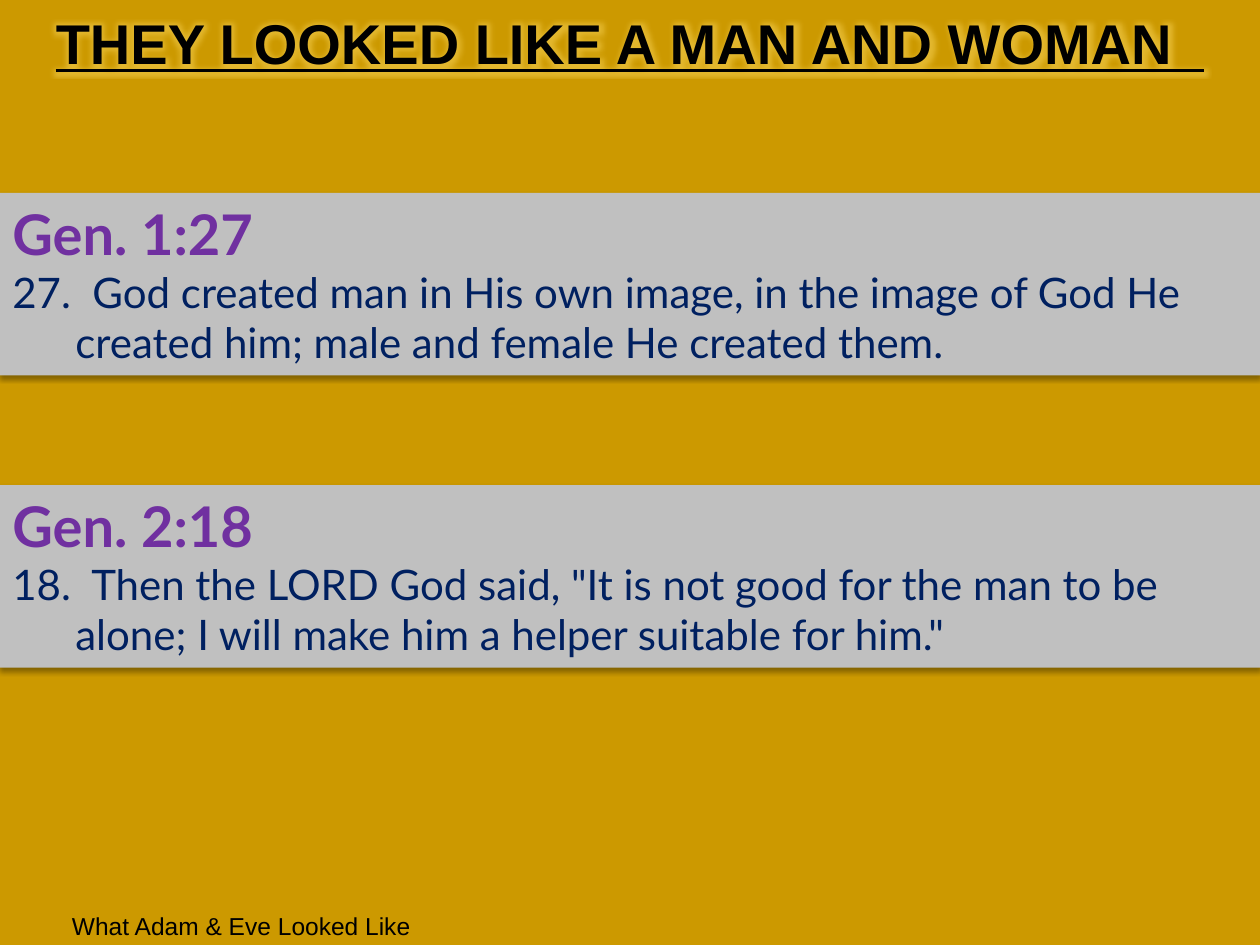
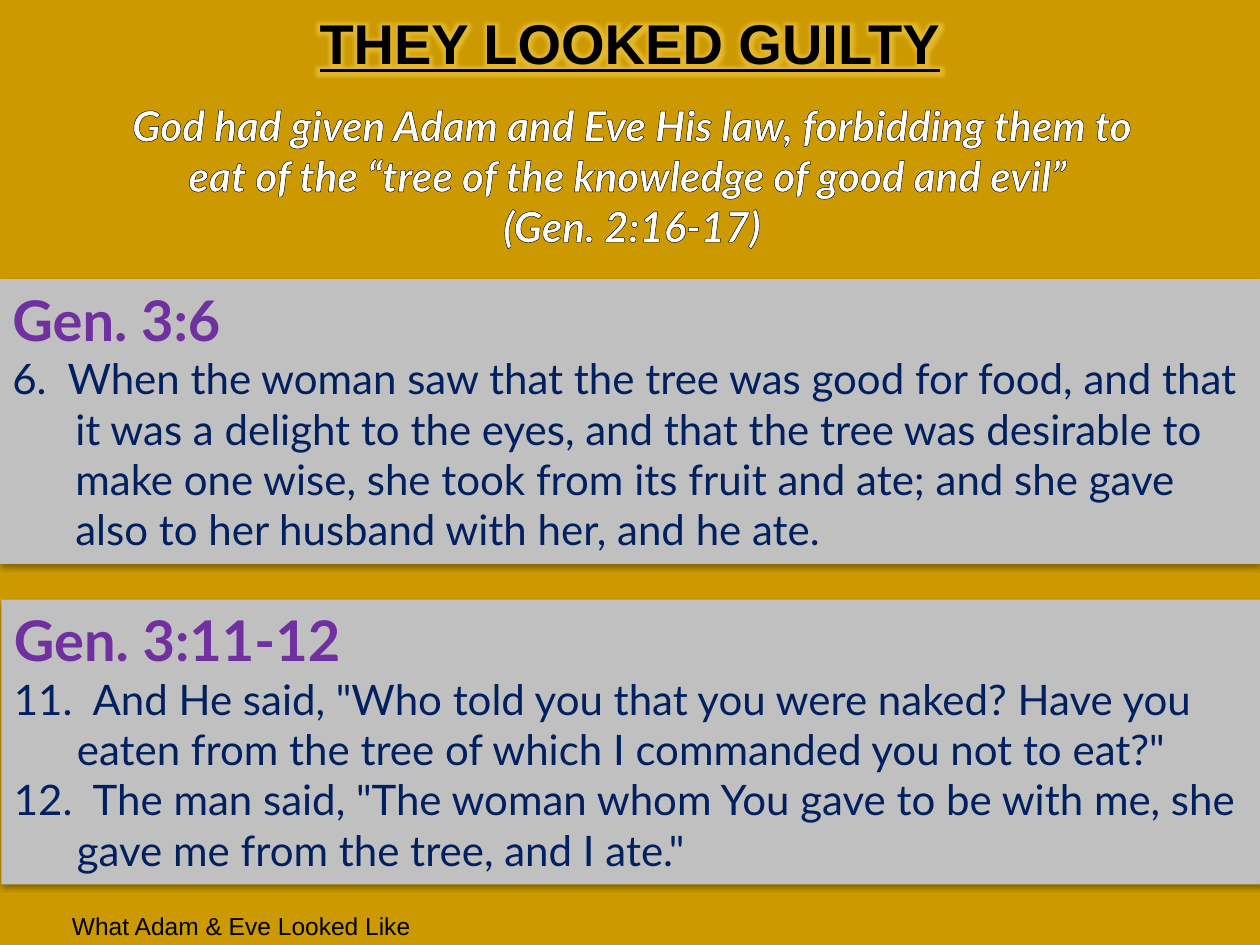
"""Builds two slides on how Adam and Eve looked."""
from lxml.etree import SubElement
from pptx import Presentation
from pptx.dml.color import RGBColor
from pptx.enum.shapes import MSO_SHAPE
from pptx.enum.text import MSO_ANCHOR, MSO_AUTO_SIZE, PP_ALIGN
from pptx.oxml import parse_xml
from pptx.oxml.ns import nsdecls, qn
from pptx.util import Cm, Pt

GOLD, SILVER, BLACK, WHITE = "CC9900", "C0C0C0", "000000", "FFFFFF"
PURPLE, NAVY, YELLOW, GLOW = "7030A0", "002060", "FFFF00", "FFDD66"
SLIDE_W, SLIDE_H = 25.4, 19.05
HANG = 1.27
FOOTER = "What Adam & Eve Looked Like"


def rgb(value):
    """Turn a hex string into a colour."""
    return RGBColor.from_string(value)


def add_effect(effects, tag, color, alpha, **attrs):
    """Add a coloured, partly transparent effect to an effect list."""
    effect = SubElement(effects, qn(tag), {k: str(v) for k, v in attrs.items()})
    clr = SubElement(effect, qn("a:srgbClr"), val=color)
    SubElement(clr, qn("a:alpha"), val=str(alpha * 1000))


def add_run(p, text, size, color, font="Lato", bold=False, italic=False,
            underline=None, outline=None, glow=None):
    """Add a formatted run to a paragraph."""
    r = p.add_run()
    r.text = text
    f = r.font
    f.name, f.size, f.bold, f.italic = font, Pt(size), bold, italic
    f.underline = underline
    f.color.rgb = rgb(color)
    rPr = r._r.get_or_add_rPr()
    if outline:
        rPr.insert(0, parse_xml(
            f'<a:ln {nsdecls("a")} w="{Pt(0.75)}"><a:solidFill>'
            f'<a:srgbClr val="{outline}"/></a:solidFill></a:ln>'))
    if glow:
        effects = parse_xml(f'<a:effectLst {nsdecls("a")}/>')
        add_effect(effects, "a:glow", glow, 45, rad=Pt(8))
        rPr.find(qn("a:solidFill")).addnext(effects)


def add_line(tf, text, first=False, align=PP_ALIGN.LEFT, hang=0, **fmt):
    """Write one paragraph, with an optional hanging indent."""
    p = tf.paragraphs[0] if first else tf.add_paragraph()
    p.alignment = align
    if hang:
        pPr = p._p.get_or_add_pPr()
        pPr.set("marL", str(Cm(hang)))
        pPr.set("indent", str(-Cm(hang)))
    add_run(p, text, **fmt)
    return p


def add_text(slide, lines, left, top, width, height, **fmt):
    """Add a wrapping, centred text box."""
    sp = slide.shapes.add_textbox(Cm(left), Cm(top), Cm(width), Cm(height))
    tf = sp.text_frame
    tf.word_wrap = True
    for i, line in enumerate(lines):
        add_line(tf, line, first=i == 0, align=PP_ALIGN.CENTER, **fmt)


def add_title_slide(prs, title, tail=""):
    """Add a slide with the shared title style and footer."""
    slide = prs.slides.add_slide(prs.slide_layouts[5])
    sp = slide.shapes.title
    sp.left, sp.top, sp.width, sp.height = Cm(0), Cm(0), Cm(SLIDE_W), Cm(1.7)
    tf = sp.text_frame
    tf.word_wrap, tf.auto_size = True, MSO_AUTO_SIZE.NONE
    tf.vertical_anchor = MSO_ANCHOR.MIDDLE
    style = dict(size=32, color=BLACK, font="Arial", bold=True,
                 underline=True, glow=GLOW)
    p = add_line(tf, title, first=True, align=PP_ALIGN.CENTER,
                 outline=YELLOW, **style)
    if tail:
        add_run(p, tail, **style)
    add_text(slide, [FOOTER], 0, 18.24, 9.73, 0.84,
             size=14, color=BLACK, font="Arial")
    return slide


def add_passage(slide, reference, verses, top, height, left=0):
    """Add a full-width band with a scripture reference and its verses."""
    sp = slide.shapes.add_shape(MSO_SHAPE.RECTANGLE, Cm(left), Cm(top),
                                Cm(SLIDE_W), Cm(height))
    sp.fill.solid()
    sp.fill.fore_color.rgb = rgb(SILVER)
    sp.line.fill.background()
    sp.shadow.inherit = False
    add_effect(sp._element.spPr.find(qn("a:effectLst")), "a:outerShdw", BLACK, 35,
               blurRad=Pt(3.1), dist=Pt(1.8), dir=5400000, rotWithShape=0)
    tf = sp.text_frame
    tf.word_wrap, tf.auto_size = True, MSO_AUTO_SIZE.SHAPE_TO_FIT_TEXT
    tf.vertical_anchor = MSO_ANCHOR.TOP
    add_line(tf, reference, first=True, hang=HANG, size=32, color=PURPLE, bold=True)
    for verse in verses:
        add_line(tf, verse, hang=HANG, size=24, color=NAVY)


def main():
    """Build and save the presentation."""
    prs = Presentation()
    prs.slide_width, prs.slide_height = Cm(SLIDE_W), Cm(SLIDE_H)
    fill = prs.slide_master.background.fill
    fill.solid()
    fill.fore_color.rgb = rgb(GOLD)

    slide = add_title_slide(prs, "THEY LOOKED LIKE A MAN AND WOMAN", tail="  ")
    add_passage(slide, "Gen. 1:27", [
        "27.  God created man in His own image, in the image of God He "
        "created him; male and female He created them."], 3.89, 3.68)
    add_passage(slide, "Gen. 2:18", [
        '18.  Then the LORD God said, "It is not good for the man to be '
        'alone; I will make him a helper suitable for him."'], 9.78, 3.68)

    slide = add_title_slide(prs, "THEY LOOKED GUILTY")
    add_passage(slide, "Gen. 3:6", [
        "6.  When the woman saw that the tree was good for food, and that "
        "it was a delight to the eyes, and that the tree was desirable to "
        "make one wise, she took from its fruit and ate; and she gave "
        "also to her husband with her, and he ate."], 5.63, 5.74)
    add_passage(slide, "Gen. 3:11-12", [
        '11.  And He said, "Who told you that you were naked? Have you '
        'eaten from the tree of which I commanded you not to eat?"',
        '12.  The man said, "The woman whom You gave to be with me, she '
        'gave me from the tree, and I ate."'], 12.09, 5.74, left=0.03)
    add_text(slide, [
        "God had given Adam and Eve His law, forbidding them to",
        "eat of the “tree of the knowledge of good and evil” ",
        "(Gen. 2:16-17)"], 0.08, 1.88, 25.32, 3.33, hang=HANG,
        size=24, color=WHITE, bold=True, italic=True, outline=BLACK)
    prs.save("out.pptx")


if __name__ == "__main__":
    main()
